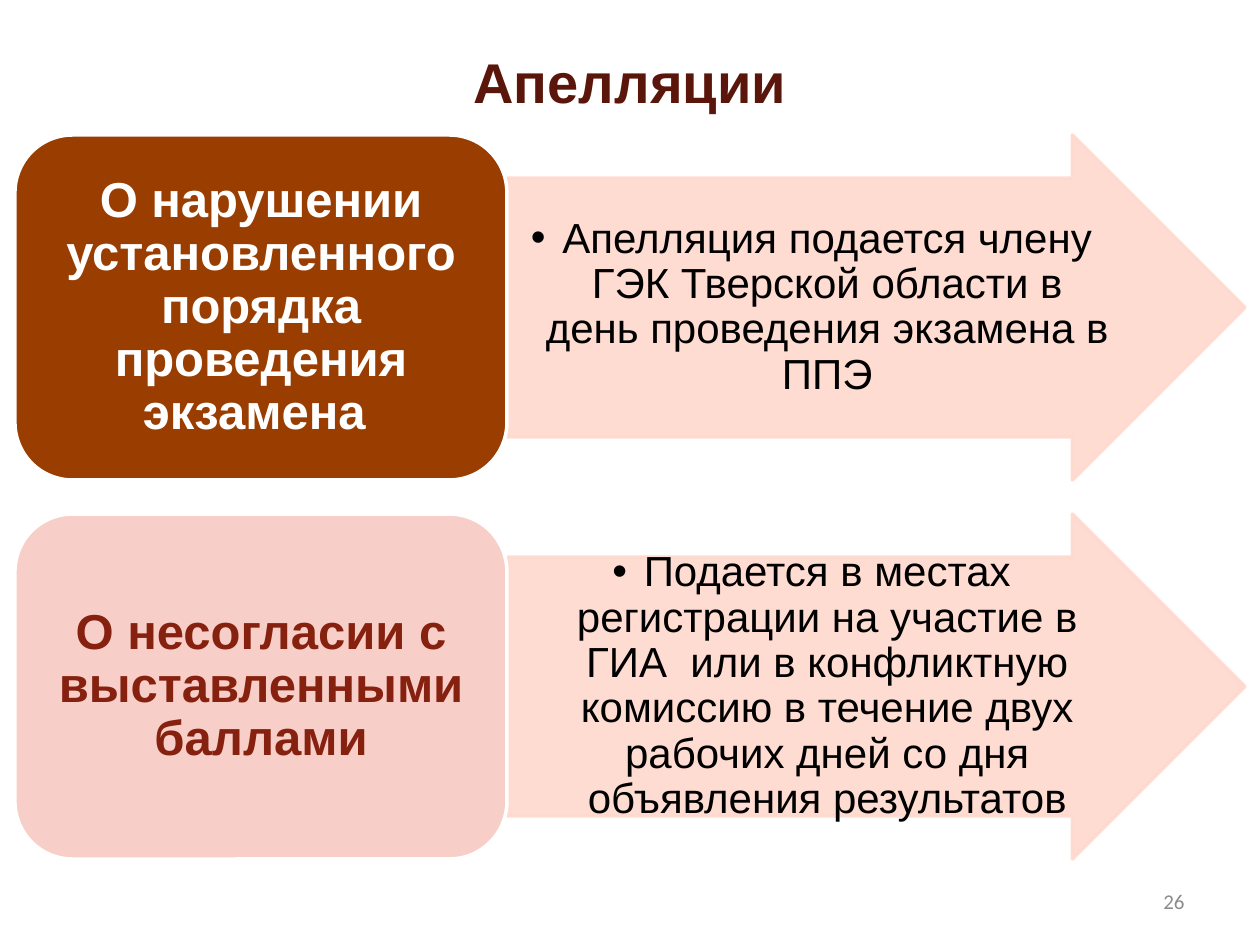
from pptx import Presentation
from pptx.dml.color import RGBColor
from pptx.enum import shapes, text
from pptx.oxml import ns, xmlchemy
from pptx.util import Emu, Pt

# Content
TITLE = "Апелляции"
PAGE_NUMBER = "26"
APPEALS = [
    {"reason": "О нарушении установленного порядка проведения экзамена ",
     "procedure": "Апелляция подается члену ГЭК Тверской области в день "
                  "проведения экзамена в ППЭ",
     "fill": "9A3D01", "color": "FFFFFF"},
    {"reason": "О несогласии с выставленными баллами",
     "procedure": "Подается в местах регистрации на участие в ГИА  или в "
                  "конфликтную комиссию в течение двух рабочих дней со дня "
                  "объявления результатов",
     "fill": "F8CFC8", "color": "862110"},
]
ARROW_COLOR = "FFD9CE"

# Layout in px, 126 to the inch
ROW_TOP, ROW_PITCH, ROW_HEIGHT = 135, 379, 345
REASON_LEFT, REASON_WIDTH, REASON_INSET = 15, 492, 17
ARROW_LEFT, ARROW_WIDTH = REASON_LEFT + REASON_WIDTH, 738
PROCEDURE_WIDTH, PROCEDURE_INSET = 609, 44


def px(n):
    return Emu(round(n * 914400 / 126))


def rgb(value):
    return RGBColor.from_string(value)


def add_element(parent, tag, **attributes):
    child = xmlchemy.OxmlElement(tag)
    for key, value in attributes.items():
        child.set(key, value)
    parent.append(child)


def write(frame, words, size, color, align, font="Arial", bold=False,
          margins=None, spacing=None, bullet=False):
    frame.word_wrap = True
    frame.auto_size = text.MSO_AUTO_SIZE.NONE
    frame.vertical_anchor = text.MSO_ANCHOR.MIDDLE
    if margins:
        frame.margin_left = frame.margin_right = px(margins[0])
        frame.margin_top = frame.margin_bottom = px(margins[1])
    paragraph = frame.paragraphs[0]
    paragraph.alignment = align
    if spacing:
        paragraph.line_spacing = spacing
    if bullet:
        properties = paragraph._p.get_or_add_pPr()
        properties.set("marL", "228600")
        properties.set("indent", "-228600")
        add_element(properties, "a:buFont", typeface="Arial")
        add_element(properties, "a:buChar", char="•")
    run = paragraph.add_run()
    run.text = words
    run.font.name, run.font.size, run.font.bold = font, Pt(size), bold
    run.font.color.rgb = rgb(color)


def add_text(slide, box, *args, **options):
    frame = slide.shapes.add_textbox(*map(px, box)).text_frame
    write(frame, *args, **options)


def add_panel(slide, kind, box, fill, line, opacity=None):
    panel = slide.shapes.add_shape(kind, *map(px, box))
    panel.shadow.inherit = False
    panel.fill.solid()
    panel.fill.fore_color.rgb = rgb(fill)
    panel.line.color.rgb = rgb(line)
    panel.line.width = Pt(2)
    if opacity:
        for color in panel._element.spPr.iter(ns.qn("a:srgbClr")):
            add_element(color, "a:alpha", val=str(opacity * 1000))
    return panel


def add_appeal(slide, appeal, top):
    center = text.PP_ALIGN.CENTER
    # Arrow with the procedure
    arrow = add_panel(slide, shapes.MSO_SHAPE.RIGHT_ARROW,
                      (ARROW_LEFT, top, ARROW_WIDTH, ROW_HEIGHT),
                      ARROW_COLOR, ARROW_COLOR, opacity=90)
    arrow.adjustments[0], arrow.adjustments[1] = 0.75, 0.5
    add_text(slide, (ARROW_LEFT, top + PROCEDURE_INSET, PROCEDURE_WIDTH,
                     ROW_HEIGHT - 2 * PROCEDURE_INSET),
             appeal["procedure"], 24, "000000", center,
             margins=(2, 2), spacing=0.9, bullet=True)
    # Rounded box with the reason
    add_panel(slide, shapes.MSO_SHAPE.ROUNDED_RECTANGLE,
              (REASON_LEFT, top, REASON_WIDTH, ROW_HEIGHT),
              appeal["fill"], "FFFFFF")
    add_text(slide, (REASON_LEFT + REASON_INSET, top + REASON_INSET,
                     REASON_WIDTH - 2 * REASON_INSET,
                     ROW_HEIGHT - 2 * REASON_INSET),
             appeal["reason"], 28, appeal["color"], center, bold=True,
             margins=(15, 8), spacing=0.9)


def main():
    deck = Presentation()
    deck.slide_width, deck.slide_height = px(1260), px(945)
    slide = deck.slides.add_slide(deck.slide_layouts[5])

    # Title
    title = slide.shapes.title
    title.left, title.top, title.width, title.height = map(
        px, (63, 37, 1134, 89))
    write(title.text_frame, TITLE, 32, "5A160B", text.PP_ALIGN.CENTER,
          bold=True)

    # One row for each kind of appeal
    for row, appeal in enumerate(APPEALS):
        add_appeal(slide, appeal, ROW_TOP + row * ROW_PITCH)

    # Page number
    add_text(slide, (903, 876, 294, 50), PAGE_NUMBER, 12, "8C8C8C",
             text.PP_ALIGN.RIGHT, font="Calibri")

    deck.save("out.pptx")


if __name__ == "__main__":
    main()
